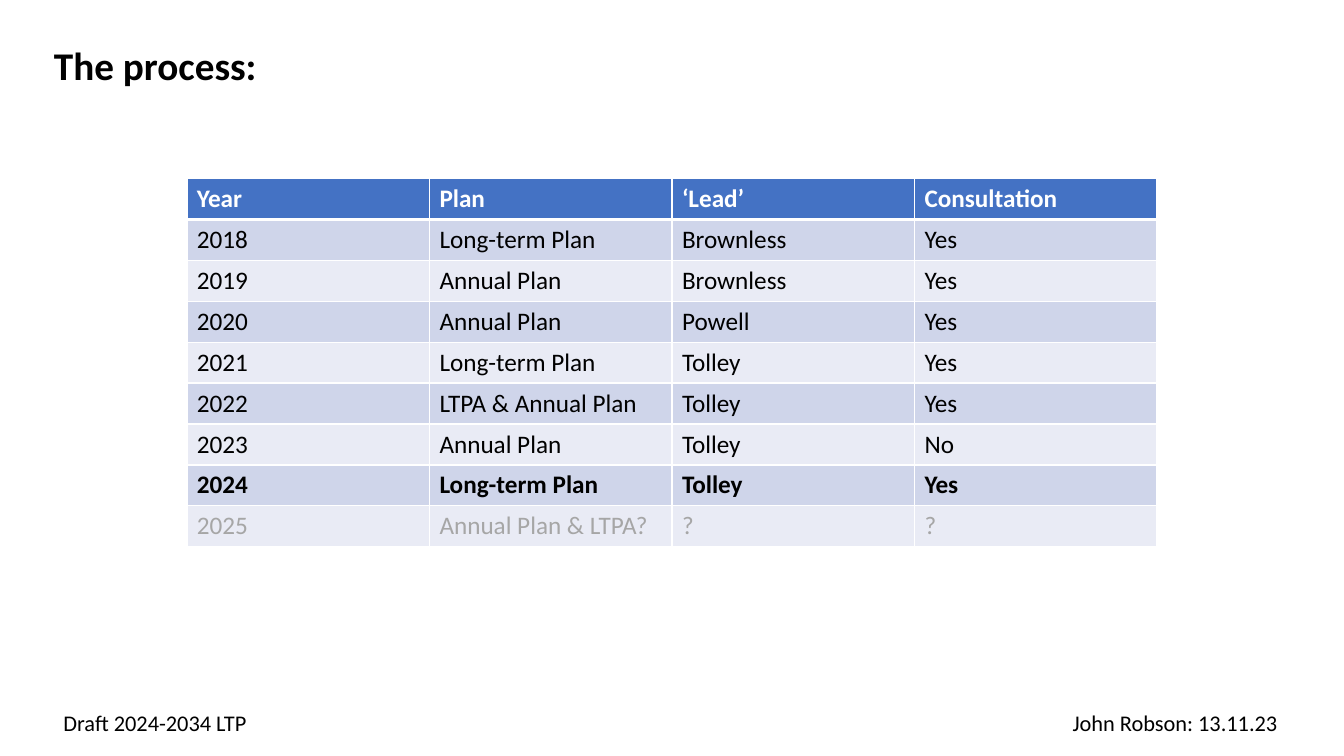
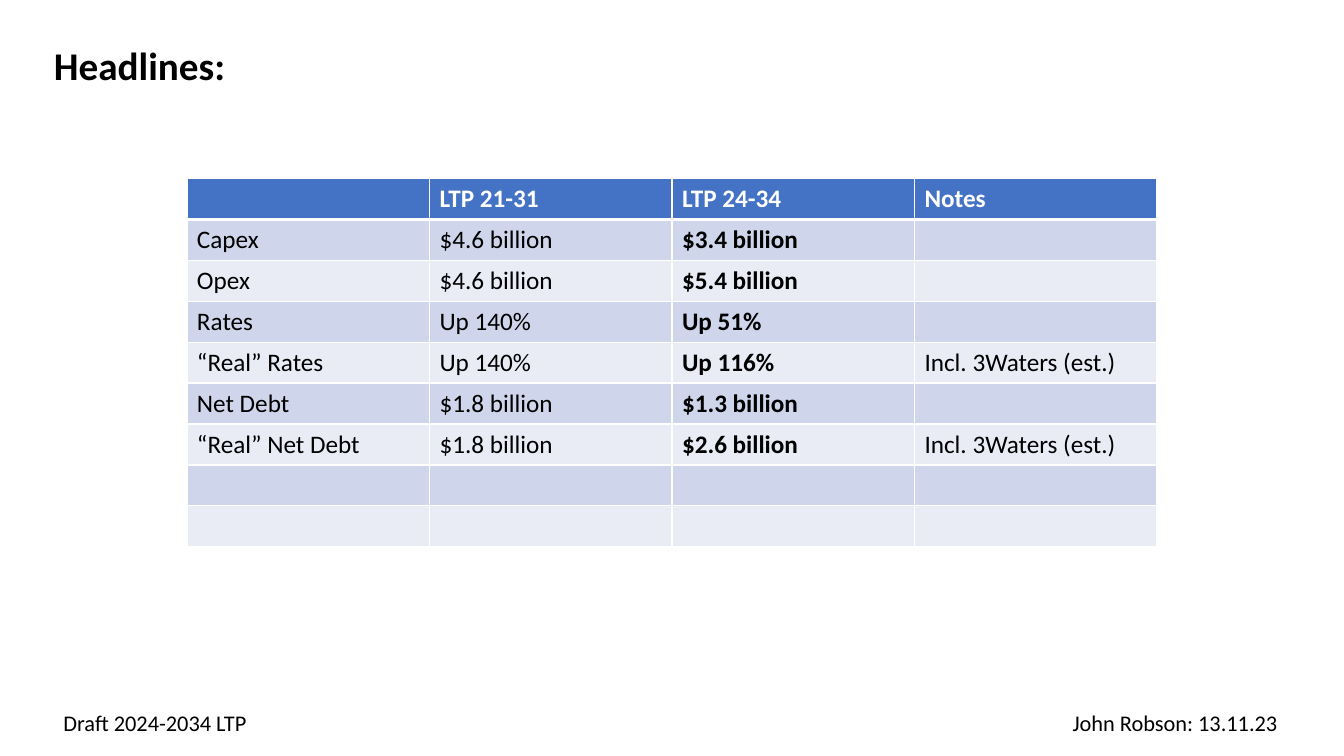
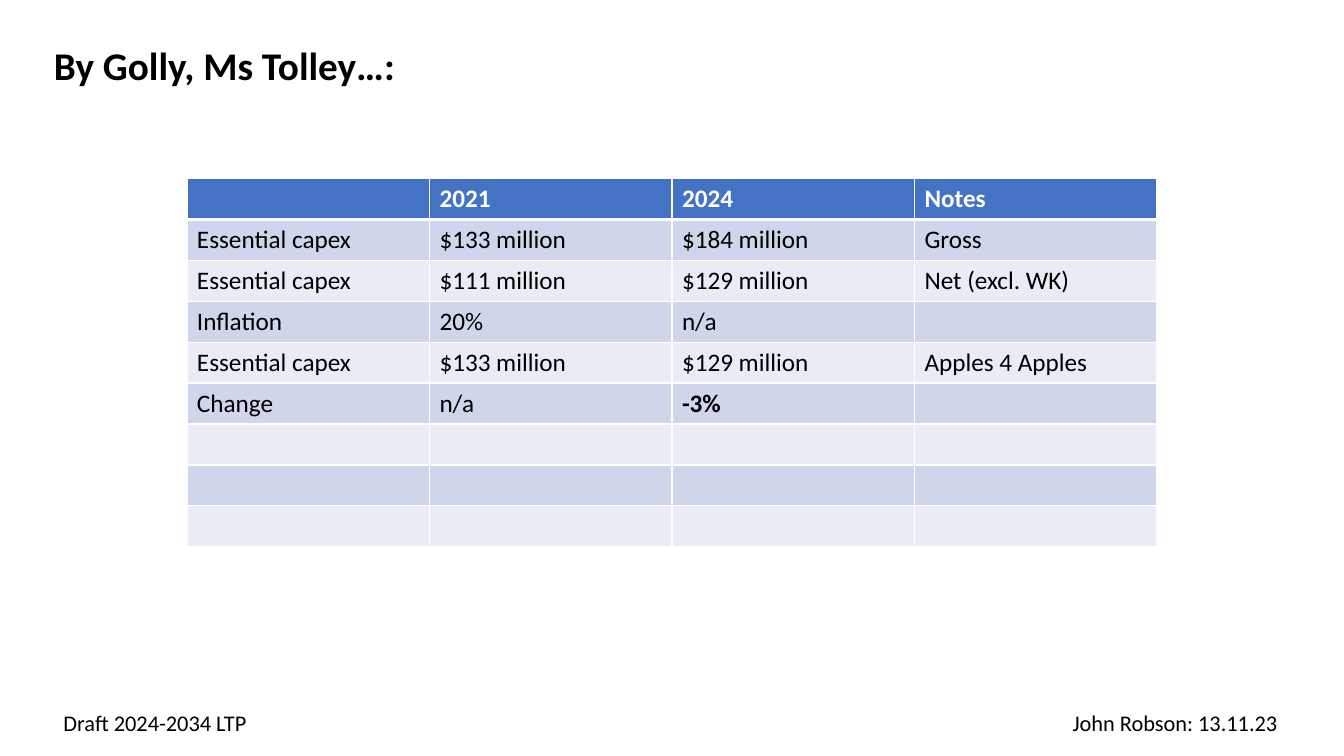
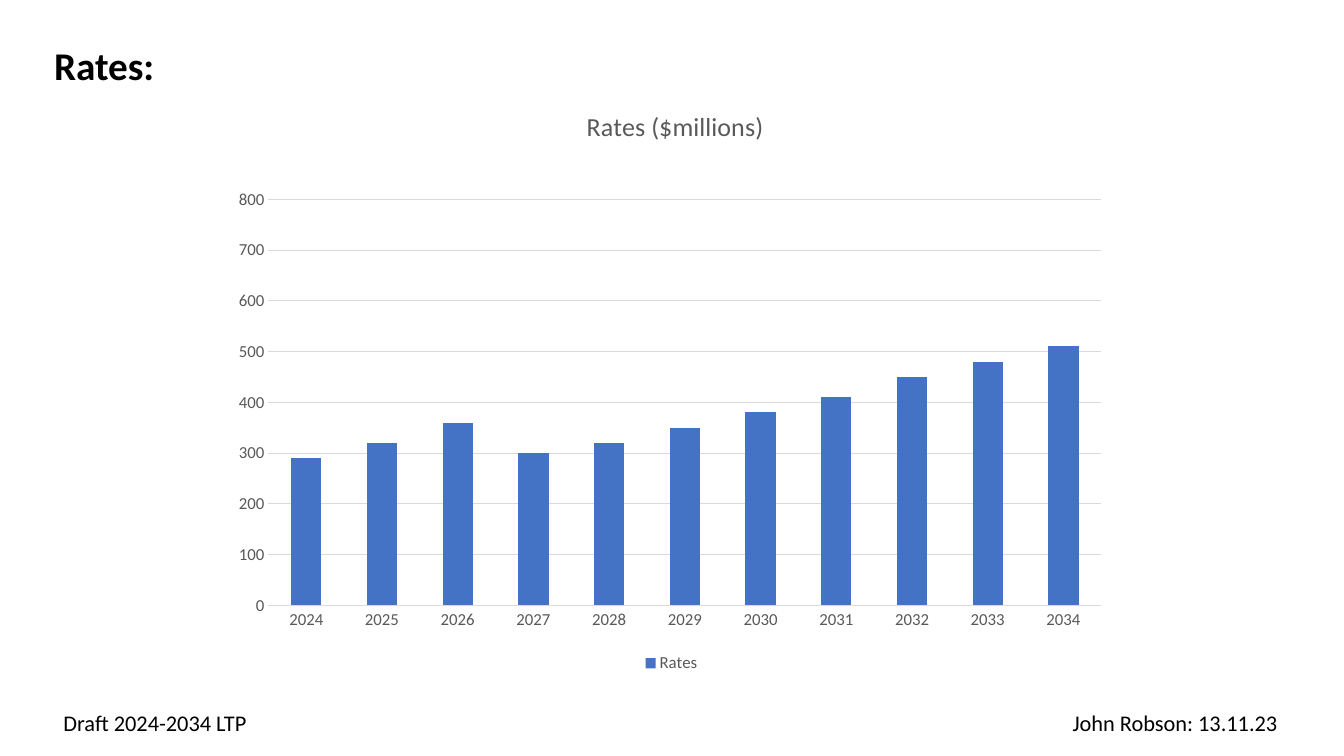
from lxml import etree
from pptx import Presentation
from pptx.chart.data import CategoryChartData
from pptx.dml.color import RGBColor
from pptx.enum.chart import XL_CHART_TYPE, XL_LEGEND_POSITION, XL_TICK_MARK
from pptx.enum.text import MSO_AUTO_SIZE
from pptx.oxml.ns import qn
from pptx.util import Pt

STACKED = XL_CHART_TYPE.COLUMN_STACKED
LEGEND_BOTTOM = XL_LEGEND_POSITION.BOTTOM
NO_TICK = XL_TICK_MARK.NONE
FIT_SHAPE = MSO_AUTO_SIZE.SHAPE_TO_FIT_TEXT

BLACK = RGBColor(0x00, 0x00, 0x00)
WHITE = RGBColor(0xFF, 0xFF, 0xFF)
BLUE = RGBColor(0x44, 0x72, 0xC4)
BAND_DARK = RGBColor(0xCF, 0xD5, 0xEA)
BAND_LIGHT = RGBColor(0xE9, 0xEB, 0xF5)
FADED = RGBColor(0xA6, 0xA6, 0xA6)
CHART_TEXT = RGBColor(0x59, 0x59, 0x59)
CHART_LINE = RGBColor(0xD9, 0xD9, 0xD9)

FONT = "Calibri"
EMU_PER_PX = 9525
PAGE_SIZE = (1280, 720)
TABLE_BOX = (178, 170, 924, 351)
CHART_BOX = (213, 76, 853, 569)
TABLE_ROWS = 9

PROCESS = [
    ("Year", "Plan", "‘Lead’", "Consultation"),
    ("2018", "Long-term Plan", "Brownless", "Yes"),
    ("2019", "Annual Plan", "Brownless", "Yes"),
    ("2020", "Annual Plan", "Powell", "Yes"),
    ("2021", "Long-term Plan", "Tolley", "Yes"),
    ("2022", "LTPA & Annual Plan", "Tolley", "Yes"),
    ("2023", "Annual Plan", "Tolley", "No"),
    ("2024", "Long-term Plan", "Tolley", "Yes"),
    ("2025", "Annual Plan & LTPA?", "?", "?"),
]
HEADLINES = [
    ("", "LTP 21-31", "LTP 24-34", "Notes"),
    ("Capex", "$4.6 billion", "$3.4 billion", ""),
    ("Opex", "$4.6 billion", "$5.4 billion", ""),
    ("Rates", "Up 140%", "Up 51%", ""),
    ("“Real” Rates", "Up 140%", "Up 116%", "Incl. 3Waters (est.)"),
    ("Net Debt", "$1.8 billion", "$1.3 billion", ""),
    ("“Real” Net Debt", "$1.8 billion", "$2.6 billion", "Incl. 3Waters (est.)"),
]
ESSENTIALS = [
    ("", "2021", "2024", "Notes"),
    ("Essential capex", "$133 million", "$184 million", "Gross"),
    ("Essential capex", "$111 million", "$129 million", "Net (excl. WK)"),
    ("Inflation", "20%", "n/a", ""),
    ("Essential capex", "$133 million", "$129 million", "Apples 4 Apples"),
    ("Change", "n/a", "-3%", ""),
]
RATES = [290, 320, 360, 300, 320, 350, 380, 410, 450, 480, 510]


def px(*lengths):
    return [length * EMU_PER_PX for length in lengths]


def style_font(font, size, color, bold=False):
    font.name = FONT
    font.size = Pt(size)
    font.bold = bold
    font.color.rgb = color


def write(frame, text, size=18, color=BLACK, bold=False):
    span = frame.paragraphs[0].add_run()
    span.text = text
    style_font(span.font, size, color, bold)


def add_label(page, box, text, **text_format):
    frame = page.shapes.add_textbox(*px(*box)).text_frame
    frame.word_wrap = False
    frame.auto_size = FIT_SHAPE
    write(frame, text, **text_format)


def add_page(deck, title, title_width):
    """Blank page with the shared title and footers."""
    page = deck.slides.add_slide(deck.slide_layouts[6])
    add_label(page, (42, 35, title_width, 55), title, size=28, bold=True)
    add_label(page, (1012, 671, 217, 35), "John Robson: 13.11.23", size=16)
    add_label(page, (51, 671, 197, 35), "Draft 2024-2034 LTP", size=16)
    return page


def set_borders(cell, bottom):
    properties = cell._tc.get_or_add_tcPr()
    for side, points in (("L", 1), ("R", 1), ("T", 1), ("B", bottom)):
        line = etree.SubElement(properties, qn(f"a:ln{side}"), w=str(Pt(points)))
        fill = etree.SubElement(line, qn("a:solidFill"))
        etree.SubElement(fill, qn("a:srgbClr"), val=str(WHITE))


def add_plan_table(page, box, rows, bold_cells=(), faded_row=None):
    """Header row and banded rows; the table is filled up with empty rows."""
    columns = len(rows[0])
    table = page.shapes.add_table(TABLE_ROWS, columns, *px(*box)).table
    for row in range(TABLE_ROWS):
        header = row == 0
        if header:
            fill, color = BLUE, WHITE
        else:
            fill = BAND_DARK if row % 2 else BAND_LIGHT
            color = FADED if row == faded_row else BLACK
        for column in range(columns):
            cell = table.cell(row, column)
            set_borders(cell, bottom=3 if header else 1)
            cell.fill.solid()
            cell.fill.fore_color.rgb = fill
            text = rows[row][column] if row < len(rows) else ""
            if text:
                write(cell.text_frame, text, color=color,
                      bold=header or (row, column) in bold_cells)


def set_layout(parent, index, **values):
    """Place a chart part by fractions of the chart's size."""
    for old in parent.findall(qn("c:layout")):
        parent.remove(old)
    layout = etree.Element(qn("c:layout"))
    manual = etree.SubElement(layout, qn("c:manualLayout"))
    for name, value in values.items():
        etree.SubElement(manual, qn(f"c:{name}"), val=str(value))
    parent.insert(index, layout)


def add_rates_chart(page, box):
    data = CategoryChartData()
    data.categories = [str(2024 + offset) for offset in range(len(RATES))]
    data.add_series("Rates", RATES)
    chart = page.shapes.add_chart(STACKED, *px(*box), data).chart
    style_font(chart.font, 12, CHART_TEXT)

    # Title and plot area
    chart.has_title = True
    write(chart.chart_title.text_frame, "Rates ($millions)", size=18.6, color=CHART_TEXT)
    space = chart._chartSpace
    set_layout(space.find(".//" + qn("c:title")), 1,
               xMode="edge", yMode="edge", x=0.4, y=0.04)
    set_layout(space.find(".//" + qn("c:plotArea")), 0, layoutTarget="inner",
               xMode="edge", yMode="edge", x=0.05, y=0.2, w=0.93, h=0.68)

    # Legend
    chart.has_legend = True
    chart.legend.position = LEGEND_BOTTOM
    chart.legend.include_in_layout = False
    style_font(chart.legend.font, 12, CHART_TEXT)

    # Axes
    for axis in (chart.category_axis, chart.value_axis):
        axis.major_tick_mark = axis.minor_tick_mark = NO_TICK
        style_font(axis.tick_labels.font, 12, CHART_TEXT)
    values = chart.value_axis
    values.minimum_scale, values.maximum_scale, values.major_unit = 0, 800, 100
    values.format.line.fill.background()
    for line in (chart.category_axis.format.line, values.major_gridlines.format.line):
        line.color.rgb = CHART_LINE
        line.width = Pt(0.75)

    # Columns
    plot = chart.plots[0]
    plot.gap_width, plot.overlap, plot.vary_by_categories = 150, 100, False
    column_fill = plot.series[0].format.fill
    column_fill.solid()
    column_fill.fore_color.rgb = BLUE


def main():
    deck = Presentation()
    deck.slide_width, deck.slide_height = px(*PAGE_SIZE)

    add_plan_table(add_page(deck, "The process:", 214), TABLE_BOX, PROCESS,
                   bold_cells={(7, column) for column in range(4)}, faded_row=8)
    add_plan_table(add_page(deck, "Headlines:", 184), TABLE_BOX, HEADLINES,
                   bold_cells={(row, 2) for row in range(1, 7)})
    add_plan_table(add_page(deck, "By Golly, Ms Tolley…:", 348), TABLE_BOX, ESSENTIALS,
                   bold_cells={(5, 2)})
    add_rates_chart(add_page(deck, "Rates:", 116), CHART_BOX)

    deck.save("out.pptx")


if __name__ == "__main__":
    main()
